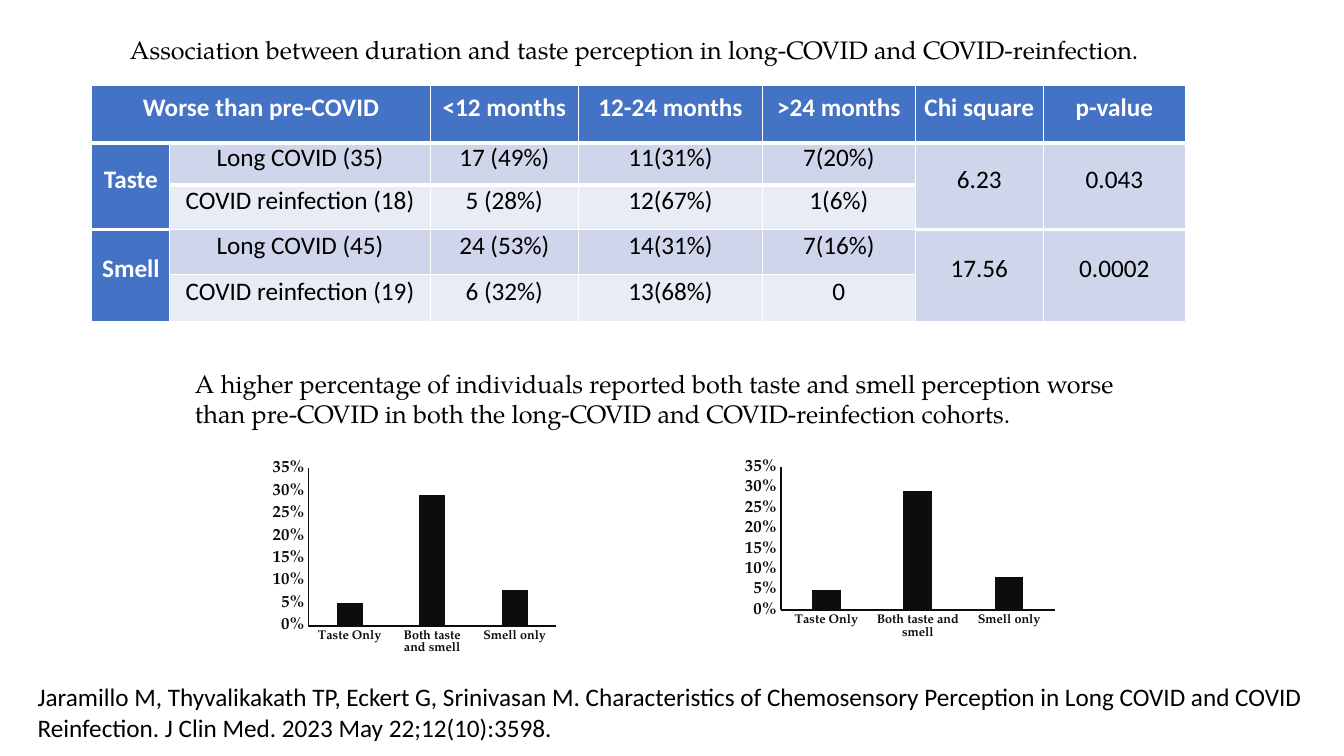
from lxml import etree
from pptx import Presentation
from pptx.chart.data import CategoryChartData
from pptx.dml.color import RGBColor
from pptx.enum.chart import XL_CHART_TYPE, XL_TICK_MARK
from pptx.enum.text import MSO_ANCHOR, MSO_AUTO_SIZE, PP_ALIGN
from pptx.oxml.ns import qn
from pptx.util import Inches, Pt

COLUMN_CHART = XL_CHART_TYPE.COLUMN_CLUSTERED
NO_TICK = XL_TICK_MARK.NONE
MIDDLE = MSO_ANCHOR.MIDDLE
GROW = MSO_AUTO_SIZE.SHAPE_TO_FIT_TEXT
CENTER = PP_ALIGN.CENTER

BLACK, WHITE, INK = "000000", "FFFFFF", "0D0D0D"
HEADER_BLUE, BAND_DARK, BAND_LIGHT = "4472C4", "CFD5EA", "E9EBF5"
SERIF, SANS = "TeX Gyre Pagella", "Calibri"

TABLE_ROWS = [
    ["Worse than pre-COVID", "", "<12 months", "12-24 months", ">24 months", "Chi square", "p-value"],
    ["Taste", "Long COVID (35)", "17 (49%)", "11(31%)", "7(20%)", "6.23", "0.043"],
    ["", "COVID reinfection (18)", "5 (28%)", "12(67%)", "1(6%)", "", ""],
    ["Smell", "Long COVID (45)", "24 (53%)", "14(31%)", "7(16%)", "17.56", "0.0002"],
    ["", "COVID reinfection (19)", "6 (32%)", "13(68%)", "0", "", ""],
]
COLUMN_WIDTHS = [5.81, 19.37, 11.03, 13.7, 11.36, 9.53, 10.58]
ROW_HEIGHTS = [7.55, 5.6, 5.87, 5.95, 6.25]
MERGES = [((0, 0), (0, 1))] + [
    ((row, column), (row + 1, column)) for row in (1, 3) for column in (0, 5, 6)
]

PERCEPTION = {"Taste Only": 0.05, "Both taste and smell": 0.29, "Smell only": 0.08}
PLOT_PERCENTS = {"x": 20.7, "y": 6.8, "w": 73.7, "h": 59.8}


def color(hex_string):
    return RGBColor.from_string(hex_string)


class SlideBuilder:
    """Draws on one slide; every length is a percentage of the slide's size."""

    def __init__(self, presentation):
        self.width = presentation.slide_width
        self.height = presentation.slide_height
        self.slide = presentation.slides.add_slide(presentation.slide_layouts[6])

    def across(self, percent):
        return round(self.width * percent / 100)

    def down(self, percent):
        return round(self.height * percent / 100)

    def box(self, left, top, width, height):
        return self.across(left), self.down(top), self.across(width), self.down(height)

    def style_font(self, font, name, size, hex_string, bold=False):
        font.name = name
        font.size = Pt(size)
        font.bold = bold
        font.color.rgb = color(hex_string)

    def text(self, area, words, font_name):
        text_frame = self.slide.shapes.add_textbox(*self.box(*area)).text_frame
        text_frame.word_wrap = True
        text_frame.auto_size = GROW
        text_frame.text = words
        self.style_font(text_frame.paragraphs[0].runs[0].font, font_name, 18, BLACK)

    def table(self, left, top):
        area = self.box(left, top, sum(COLUMN_WIDTHS), sum(ROW_HEIGHTS))
        shape = self.slide.shapes.add_table(len(ROW_HEIGHTS), len(COLUMN_WIDTHS), *area)
        table = shape.table
        table.horz_banding = False
        for column, width in zip(table.columns, COLUMN_WIDTHS):
            column.width = self.across(width)
        for row, height in zip(table.rows, ROW_HEIGHTS):
            row.height = self.down(height)
        for row, texts in enumerate(TABLE_ROWS):
            for column, words in enumerate(texts):
                self.cell(table.cell(row, column), words, row, column)
        for column in range(len(COLUMN_WIDTHS)):
            self.thick_border(table.cell(0, column), "a:lnB")
            self.thick_border(table.cell(1, column), "a:lnT")
        for first, last in MERGES:
            table.cell(*first).merge(table.cell(*last))

    def cell(self, cell, words, row, column):
        is_header = row == 0 or column == 0
        band = BAND_DARK if row % 2 or column >= 5 else BAND_LIGHT
        cell.fill.solid()
        cell.fill.fore_color.rgb = color(HEADER_BLUE if is_header else band)
        cell.margin_left = cell.margin_right = cell.margin_top = cell.margin_bottom = 0
        cell.vertical_anchor = MIDDLE
        if not words:
            return
        cell.text_frame.text = words
        paragraph = cell.text_frame.paragraphs[0]
        paragraph.alignment = CENTER
        paragraph.line_spacing = Pt(13)
        text_color = WHITE if is_header else BLACK
        self.style_font(paragraph.runs[0].font, SANS, 18, text_color, is_header)

    def thick_border(self, cell, side):
        line = etree.Element(qn(side), w=str(Pt(3)))
        fill = etree.SubElement(line, qn("a:solidFill"))
        etree.SubElement(fill, qn("a:srgbClr")).set("val", WHITE)
        cell._tc.get_or_add_tcPr().insert(0, line)

    def chart(self, area):
        data = CategoryChartData(number_format="0%")
        data.categories = list(PERCEPTION)
        data.add_series("Series 1", list(PERCEPTION.values()))
        chart = self.slide.shapes.add_chart(COLUMN_CHART, *self.box(*area), data).chart
        chart.has_legend = False
        chart.has_title = False
        self.style_font(chart.font, SERIF, 12, INK, True)

        plot = chart.plots[0]
        plot.gap_width = 219
        plot.overlap = -27
        plot.vary_by_categories = False
        bars = plot.series[0].format.fill
        bars.solid()
        bars.fore_color.rgb = color(INK)

        for axis, size in ((chart.category_axis, 9), (chart.value_axis, 12)):
            axis.has_major_gridlines = False
            axis.major_tick_mark = axis.minor_tick_mark = NO_TICK
            axis.format.line.color.rgb = color(INK)
            axis.format.line.width = Pt(1.25)
            self.style_font(axis.tick_labels.font, SERIF, size, INK, True)
        chart.value_axis.minimum_scale = 0
        chart.value_axis.maximum_scale = 0.35
        chart.value_axis.major_unit = 0.05
        chart.value_axis.tick_labels.number_format = "0%"
        chart.value_axis.tick_labels.number_format_is_linked = False
        self.place_plot(chart)

    def place_plot(self, chart):
        """Fix the inner plot area at its percentages of the chart."""
        plot_area = chart._chartSpace.find(".//" + qn("c:plotArea"))
        for automatic in plot_area.findall(qn("c:layout")):
            plot_area.remove(automatic)
        layout = etree.Element(qn("c:layout"))
        manual = etree.SubElement(layout, qn("c:manualLayout"))
        settings = {"layoutTarget": "inner", "xMode": "edge", "yMode": "edge"}
        settings.update({name: percent / 100 for name, percent in PLOT_PERCENTS.items()})
        for name, value in settings.items():
            etree.SubElement(manual, qn("c:" + name)).set("val", str(value))
        plot_area.insert(0, layout)


def main():
    presentation = Presentation()
    presentation.slide_width = Inches(13.33)
    presentation.slide_height = Inches(7.5)
    builder = SlideBuilder(presentation)

    builder.table(6.83, 11.33)
    builder.text(
        (8.93, 3.87, 82.15, 5.33),
        "Association between duration and taste perception in long-COVID and COVID-reinfection.",
        SERIF,
    )
    for area in ((17.78, 59.6, 24.98, 34.8), (52.36, 59.6, 27.68, 31.73)):
        builder.chart(area)
    builder.text(
        (13.76, 48.08, 70.29, 9.47),
        "A higher percentage of individuals reported both taste and smell perception worse "
        "than pre-COVID in both the long-COVID and COVID-reinfection cohorts.",
        SERIF,
    )
    builder.text(
        (2.06, 89.52, 97.07, 9.47),
        "Jaramillo M, Thyvalikakath TP, Eckert G, Srinivasan M. Characteristics of "
        "Chemosensory Perception in Long COVID and COVID Reinfection. "
        "J Clin Med. 2023 May 22;12(10):3598.",
        SANS,
    )
    presentation.save("out.pptx")


if __name__ == "__main__":
    main()
